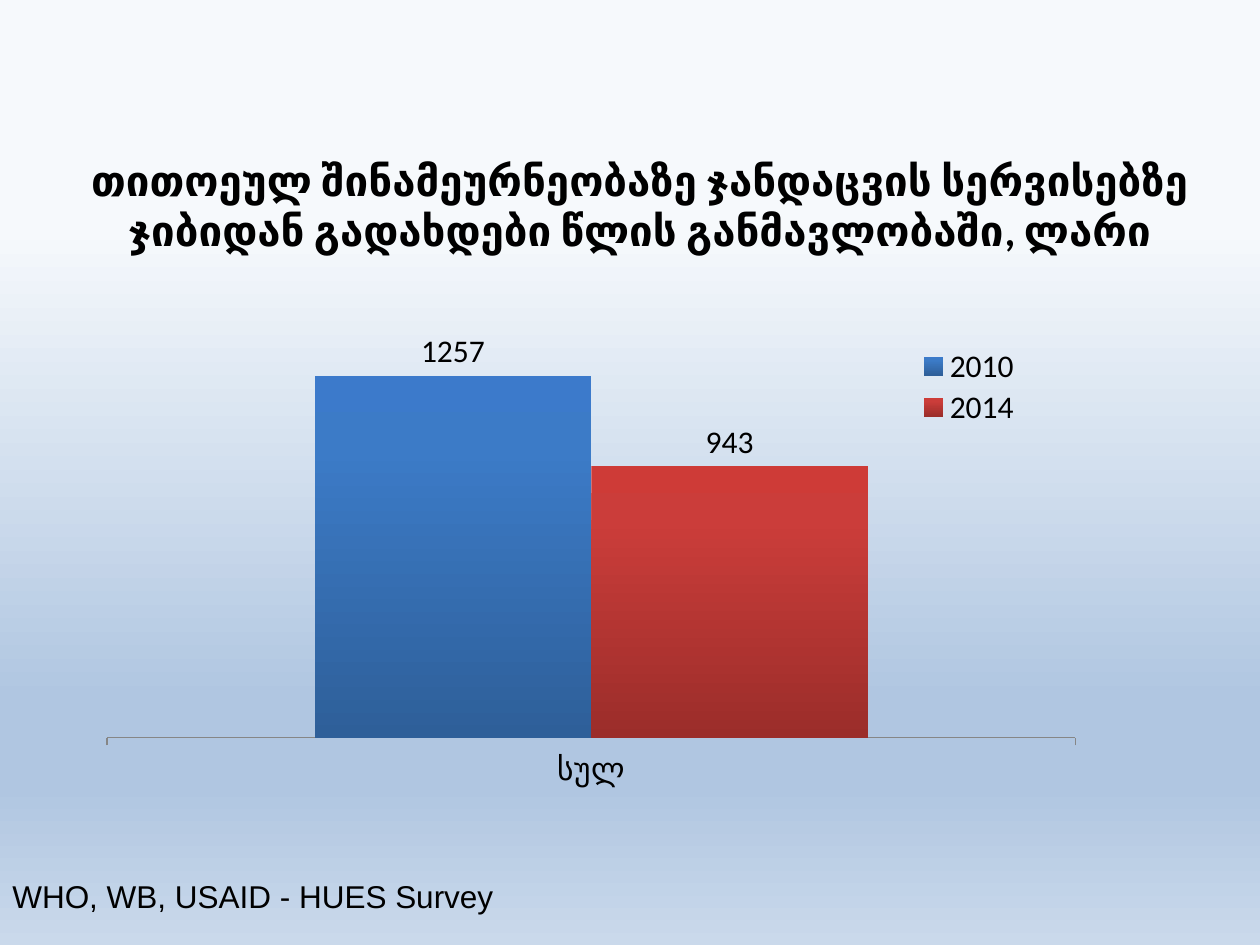
import pptx
import pptx.util
import pptx.chart.data
import pptx.dml.color
import pptx.enum.chart
import pptx.enum.text
import pptx.oxml
import pptx.oxml.ns

Pt = pptx.util.Pt
qn = pptx.oxml.ns.qn
COLORS = {"ink": "000000", "axis": "868686"}
SKY = [(24, "F6F9FC"), (74, "B0C6E1"), (83, "B0C6E1"), (100, "CAD9EB")]
BARS = {
    "2010": (1257, [(0, "3C7ACB"), (20, "3C7BC7"), (100, "2E5F99")]),
    "2014": (943, [(0, "CE3B37"), (20, "CB3D3A"), (100, "9B2D2A")]),
}


def rgb(name):
    return pptx.dml.color.RGBColor.from_string(COLORS[name])


def apply(item, values):
    for key, value in values.items():
        setattr(item, key, value)


def shade(fill, root, stops):
    """Give the fill a top-to-bottom gradient with any number of stops."""
    fill.gradient()
    fill.gradient_angle = 270
    group = next(root.iter(qn("a:gsLst")))
    for old in list(group):
        group.remove(old)
    for share, color in stops:
        group.append(pptx.oxml.parse_xml(
            f'<a:gs {pptx.oxml.ns.nsdecls("a")} pos="{share * 1000}">'
            f'<a:srgbClr val="{color}"/></a:gs>'))


def pin(part, index, box, inner=False):
    """Fix a chart part at shares of the chart's size."""
    for old in part.findall(qn("c:layout")):
        part.remove(old)
    rows = '<c:layoutTarget val="inner"/>' if inner else ""
    rows += '<c:xMode val="edge"/><c:yMode val="edge"/>'
    rows += "".join(f'<c:{k} val="{v}"/>' for k, v in zip("xywh", box))
    part.insert(index, pptx.oxml.parse_xml(
        f'<c:layout {pptx.oxml.ns.nsdecls("c")}>'
        f"<c:manualLayout>{rows}</c:manualLayout></c:layout>"))


class Deck:
    def __init__(self):
        self.file = pptx.Presentation()
        self.file.slide_width = pptx.util.Inches(10)
        self.file.slide_height = pptx.util.Inches(7.5)
        self.slide = self.file.slides.add_slide(self.file.slide_layouts[5])
        shade(self.slide.background.fill, self.slide.element, SKY)

    def box(self, *shares):
        """Turn shares of the slide into left, top, width and height."""
        sides = (self.file.slide_width, self.file.slide_height) * 2
        return [round(s * side) for s, side in zip(shares, sides)]

    def style(self, font, size, name, bold=False):
        apply(font, {"size": Pt(size), "name": name, "bold": bold})
        font.color.rgb = rgb("ink")

    def title(self, text, *shares):
        shape = self.slide.shapes.title
        apply(shape, dict(zip(("left", "top", "width", "height"),
                              self.box(*shares))))
        frame = shape.text_frame
        frame.text = text
        apply(frame, {"vertical_anchor": pptx.enum.text.MSO_ANCHOR.MIDDLE,
                      "auto_size": pptx.enum.text.MSO_AUTO_SIZE.NONE})
        line = frame.paragraphs[0]
        line.alignment = pptx.enum.text.PP_ALIGN.CENTER
        self.style(line.runs[0].font, 24, "Calibri", True)

    def note(self, text, *shares):
        frame = self.slide.shapes.add_textbox(*self.box(*shares)).text_frame
        frame.text = text
        apply(frame, {"word_wrap": False,
                      "auto_size": pptx.enum.text.MSO_AUTO_SIZE.SHAPE_TO_FIT_TEXT})
        self.style(frame.paragraphs[0].runs[0].font, 18, "Arial")

    def chart(self, label, bars, *shares):
        enum = pptx.enum.chart
        data = pptx.chart.data.CategoryChartData()
        data.categories = [label]
        for name, (value, _) in bars.items():
            data.add_series(name, [value])
        chart = self.slide.shapes.add_chart(
            enum.XL_CHART_TYPE.COLUMN_CLUSTERED, *self.box(*shares), data).chart
        apply(chart, {"has_title": False, "has_legend": True})
        self.style(chart.font, 18, "Calibri")

        plot = chart.plots[0]
        apply(plot, {"gap_width": 150, "overlap": 0,
                     "vary_by_categories": False, "has_data_labels": True})
        apply(plot.data_labels, {
            "show_value": True,
            "position": enum.XL_LABEL_POSITION.OUTSIDE_END})
        for bar in plot.series:
            shade(bar.format.fill, bar._element, bars[bar.name][1])

        apply(chart.value_axis, {"visible": False, "minimum_scale": 0,
                                 "maximum_scale": 1400,
                                 "has_major_gridlines": False})
        axis = chart.category_axis
        axis.major_tick_mark = enum.XL_TICK_MARK.OUTSIDE
        axis.format.line.color.rgb = rgb("axis")
        apply(chart.legend, {"position": enum.XL_LEGEND_POSITION.RIGHT,
                             "include_in_layout": False})
        pin(chart.legend._element, 1, (0.73, 0.04, 0.1, 0.18))
        area = next(chart._chartSpace.iter(qn("c:plotArea")))
        pin(area, 0, (0.02, 0.02, 0.854, 0.854), inner=True)


def main():
    deck = Deck()
    deck.title("თითოეულ შინამეურნეობაზე ჯანდაცვის სერვისებზე ჯიბიდან "
               "გადახდები წლის განმავლობაში, ლარი", 0.033, 2 / 15, 0.95, 1 / 6)
    deck.chart("სულ", BARS, 0.067, 0.344, 0.9, 0.5)
    deck.note("WHO, WB, USAID - HUES Survey", 0, 0.921, 0.406, 0.054)
    deck.file.save("out.pptx")


if __name__ == "__main__":
    main()
